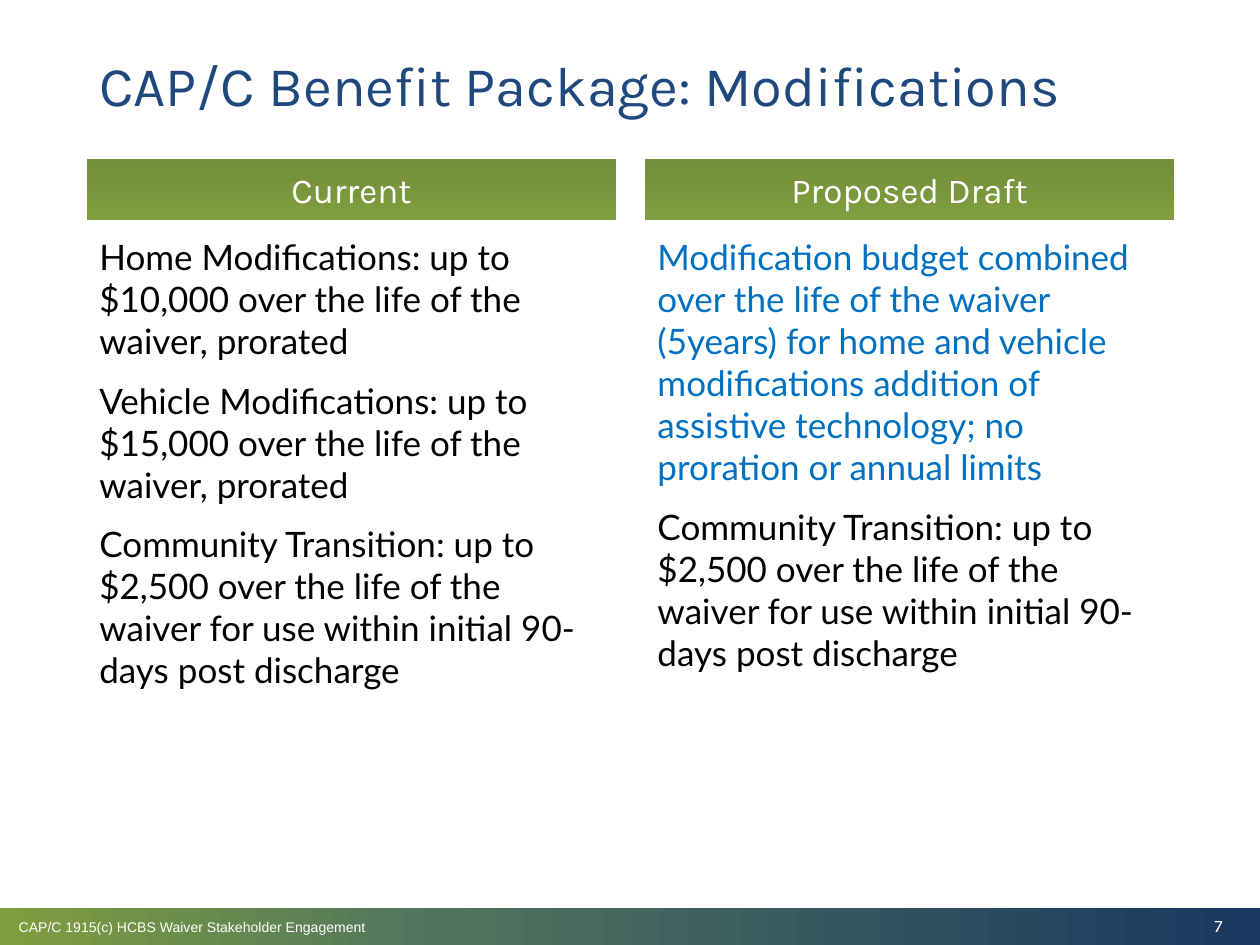
"""Build the CAP/C benefit package modifications slide."""
from lxml import etree
from pptx import Presentation
from pptx import util as u
from pptx.dml.color import RGBColor
from pptx.enum import shapes, text
from pptx.oxml import ns

COLORS = {
    "navy": "1F497D",
    "blue": "0070C0",
    "black": "000000",
    "white": "FFFFFF",
    "green": "7F9E3F",
    "dark_green": "728F3B",
    "teal": "4F745E",
    "deep_blue": "183860",
}
FOOTER_STOPS = [(0, "green"), (35, "teal"), (100, "deep_blue")]
HEADER_STOPS = [(0, "dark_green"), (100, "green")]
COLUMN_WIDTH = 4.2
TRANSITION = (
    "Community Transition: up to $2,500 over the life of the waiver "
    "for use within initial 90-days post discharge"
)
COLUMNS = [
    (0.69, "Current", [
        ("Home Modifications: up to $10,000 over the life of the waiver, prorated", "black"),
        ("Vehicle Modifications: up to $15,000 over the life of the waiver, prorated", "black"),
        (TRANSITION, "black"),
    ]),
    (5.12, "Proposed Draft", [
        ("Modification budget combined over the life of the waiver (5years) "
         "for home and vehicle modifications addition of assistive technology; "
         "no proration or annual limits", "blue"),
        (TRANSITION, "black"),
    ]),
]


def style_paragraph(paragraph, size, font, color, align=text.PP_ALIGN.LEFT, before=0):
    paragraph.alignment = align
    paragraph.space_before = u.Pt(before)
    for run in paragraph.runs:
        run.font.size = u.Pt(size)
        run.font.name = font
        run.font.color.rgb = RGBColor.from_string(COLORS[color])


def add_gradient_bar(slide, box, stops, angle):
    bar = slide.shapes.add_shape(shapes.MSO_SHAPE.RECTANGLE, *map(u.Inches, box))
    bar.shadow.inherit = False
    bar.line.fill.background()
    bar.fill.gradient()
    stop_list = bar._element.spPr.find(".//" + ns.qn("a:gsLst"))
    for stop in list(stop_list):
        stop_list.remove(stop)
    for position, color in stops:
        stop = etree.SubElement(stop_list, ns.qn("a:gs"), pos=str(position * 1000))
        etree.SubElement(stop, ns.qn("a:srgbClr"), val=COLORS[color])
    bar._element.spPr.find(".//" + ns.qn("a:lin")).set("ang", str(angle * 60000))
    return bar


def add_text(slide, box, lines, size, font, anchor=text.MSO_ANCHOR.TOP, **style):
    frame = slide.shapes.add_textbox(*map(u.Inches, box)).text_frame
    frame.word_wrap = True
    frame.vertical_anchor = anchor
    frame.text = "\n".join(line for line, _ in lines)
    for paragraph, (_, color) in zip(frame.paragraphs, lines):
        style_paragraph(paragraph, size, font, color, **style)
    return frame


def add_column(slide, left, heading, lines):
    header = add_gradient_bar(slide, (left, 1.26, COLUMN_WIDTH, 0.49), HEADER_STOPS, 90)
    header.text_frame.text = heading
    header.text_frame.vertical_anchor = text.MSO_ANCHOR.MIDDLE
    style_paragraph(header.text_frame.paragraphs[0], 20, "Karla", "white",
                    text.PP_ALIGN.CENTER)
    add_text(slide, (left, 1.82, COLUMN_WIDTH, 4.44), lines, 20, "Lato", before=10)


def add_footer(slide):
    add_gradient_bar(slide, (0, 7.21, 10, 0.3), FOOTER_STOPS, 0)
    add_text(slide, (0.05, 7.24, 7.86, 0.24),
             [("CAP/C 1915(c) HCBS Waiver Stakeholder Engagement", "white")], 8, "Arial")
    add_text(slide, (7.55, 7.27, 2.25, 0.15), [("7", "white")], 10, "Karla",
             text.MSO_ANCHOR.MIDDLE, align=text.PP_ALIGN.RIGHT)


def main():
    presentation = Presentation()
    presentation.slide_width = u.Inches(10)
    presentation.slide_height = u.Inches(7.5)
    slide = presentation.slides.add_slide(presentation.slide_layouts[6])
    add_footer(slide)
    title = add_text(slide, (0.69, 0.09, 8.6, 0.9),
                     [("CAP/C Benefit Package: Modifications", "navy")], 32, "Karla",
                     text.MSO_ANCHOR.BOTTOM, before=7.5)
    title.paragraphs[0].line_spacing = 0.9
    for left, heading, lines in COLUMNS:
        add_column(slide, left, heading, lines)
    presentation.save("out.pptx")


if __name__ == "__main__":
    main()
